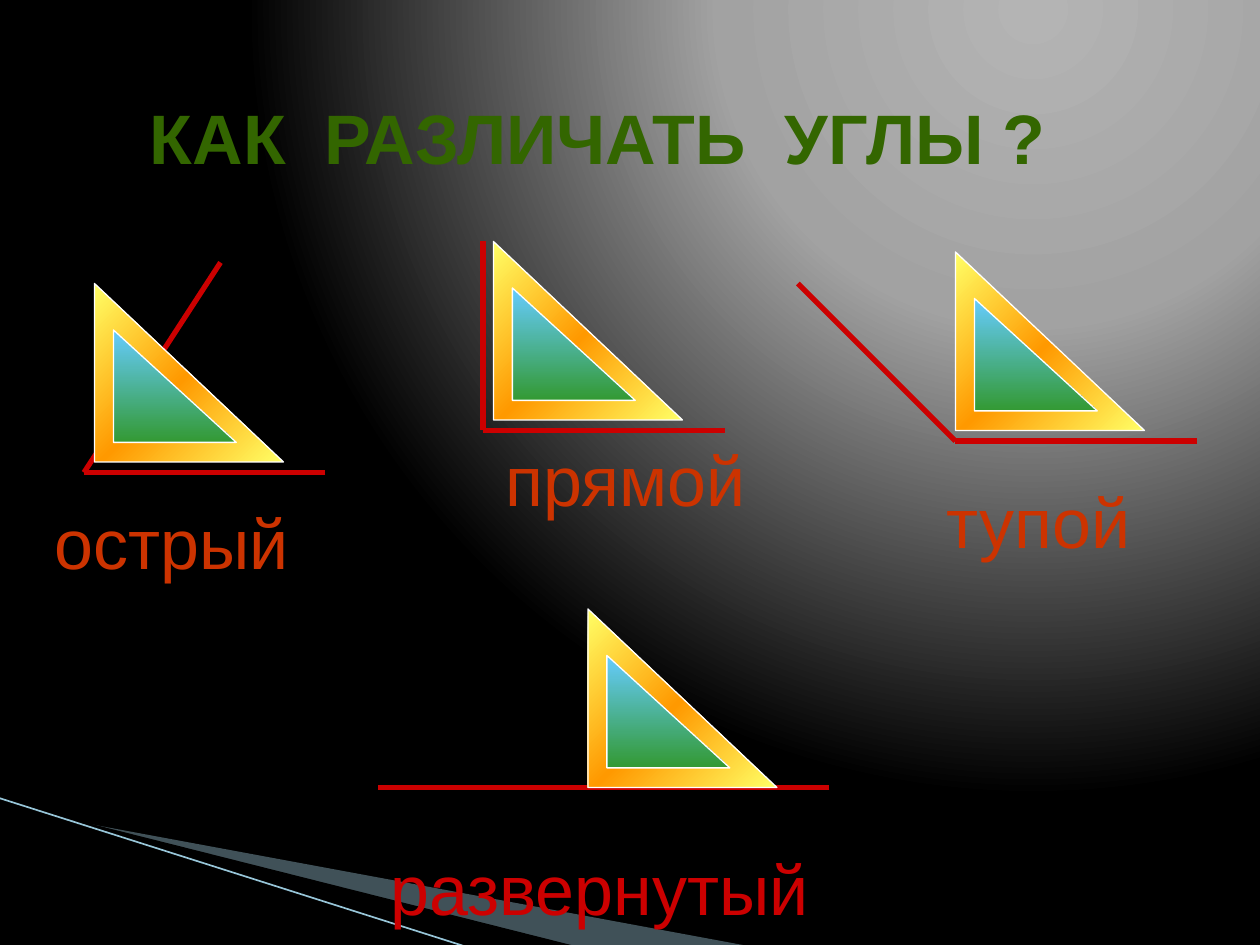
import pptx
import pptx.dml.color
import pptx.enum.shapes
import pptx.enum.text
import pptx.oxml.ns
import pptx.util
from lxml import etree

RGB = pptx.dml.color.RGBColor
BLACK, WHITE = RGB(0, 0, 0), RGB(255, 255, 255)
LIGHT_GREY, GREY = RGB(0xB4, 0xB4, 0xB4), RGB(0xA2, 0xA2, 0xA2)
WEDGE, EDGE = RGB(0xA0, 0xCB, 0xDC), RGB(0x97, 0xC5, 0xD8)
RED, RUST, GREEN = RGB(0xCC, 0, 0), RGB(0xCC, 0x33, 0), RGB(0x33, 0x66, 0)
YELLOW, ORANGE = RGB(0xFF, 0xFF, 0x66), RGB(0xFF, 0x99, 0)
SKY, GRASS = RGB(0x66, 0xCC, 0xFF), RGB(0x33, 0x99, 0x33)

# The slide is a grid of 120 columns by 90 rows, twelve to the inch
UNIT = pptx.util.Inches(1) / 12
SQUARE_SIZE = (18, 17)
LABEL_HEIGHT = 9.2


def grid(*cells):
    return [round(cell * UNIT) for cell in cells]


def child(parent, tag, **attributes):
    return etree.SubElement(parent, pptx.oxml.ns.qn(tag), attributes)


def set_gradient(fill, owner, stops, angle=None, focus=None):
    """Linear gradient at a clockwise angle, or a circular one around focus."""
    fill.gradient()
    gradient = next(owner.iter(pptx.oxml.ns.qn("a:gradFill")))
    for part in list(gradient):
        gradient.remove(part)
    stop_list = child(gradient, "a:gsLst")
    for percent, colour in stops:
        stop = child(stop_list, "a:gs", pos=str(percent * 1000))
        child(stop, "a:srgbClr", val=str(colour))
    if focus:
        circle = child(gradient, "a:path", path="circle")
        sides = {side: str(share * 1000) for side, share in zip("ltrb", focus)}
        child(circle, "a:fillToRect", **sides)
    else:
        child(gradient, "a:lin", ang=str(angle * 60000), scaled="0")


def add_line(slide, start, end, colour, width):
    line = slide.shapes.add_connector(
        pptx.enum.shapes.MSO_CONNECTOR.STRAIGHT, *grid(*start, *end))
    line.line.color.rgb = colour
    line.line.width = pptx.util.Pt(width)
    child(line._element.spPr, "a:effectLst")


def add_text(slide, left, top, width, text, colour, bold=False, wrap=True):
    box = slide.shapes.add_textbox(*grid(left, top, width, LABEL_HEIGHT))
    box.text_frame.word_wrap = wrap
    box.text_frame.auto_size = pptx.enum.text.MSO_AUTO_SIZE.SHAPE_TO_FIT_TEXT
    paragraph = box.text_frame.paragraphs[0]
    paragraph.text = text
    paragraph.font.name = "Arial"
    paragraph.font.size = pptx.util.Pt(40)
    paragraph.font.bold = bold
    paragraph.font.color.rgb = colour


def add_backdrop(slide):
    set_gradient(slide.background.fill, slide._element,
                 [(0, LIGHT_GREY), (40, GREY), (100, BLACK)],
                 focus=(65, 0, 0, 98))
    # Translucent wedge, its black lower edge and the thin line
    wedges = [
        (WEDGE, [(0.55, 6.51), (5.95, 7.51), (4.56, 7.51), (0.55, 6.5)]),
        (BLACK, [(0.53, 6.49), (4.57, 7.51), (3.72, 7.52), (0.54, 6.5)]),
    ]
    for colour, corners in wedges:
        points = [(pptx.util.Inches(x), pptx.util.Inches(y)) for x, y in corners]
        builder = slide.shapes.build_freeform(*points[0])
        builder.add_line_segments(points[1:], close=True)
        wedge = builder.convert_to_shape()
        wedge.shadow.inherit = False
        wedge.fill.solid()
        wedge.fill.fore_color.rgb = colour
        wedge.line.fill.background()
        if colour == WEDGE:
            tint = next(wedge._element.spPr.iter(pptx.oxml.ns.qn("a:srgbClr")))
            child(tint, "a:alpha", val="40000")
    add_line(slide, (-0.1, 76), (44.5, 90.2), EDGE, 0.95)


def add_set_square(slide, left, top):
    """Set square: a framed triangle with a smaller one inside."""
    width, height = SQUARE_SIZE
    group = slide.shapes.add_group_shape()
    triangles = [
        ((0, 0, 1, 1), [(0, YELLOW), (50, ORANGE), (100, YELLOW)], 45),
        ((0.1, 0.26, 0.65, 0.63), [(0, SKY), (100, GRASS)], 90),
    ]
    for (x, y, w, h), stops, angle in triangles:
        triangle = group.shapes.add_shape(
            pptx.enum.shapes.MSO_SHAPE.RIGHT_TRIANGLE,
            *grid(left + x * width, top + y * height, w * width, h * height))
        triangle.shadow.inherit = False
        set_gradient(triangle.fill, triangle._element, stops, angle)
        triangle.line.color.rgb = WHITE
        triangle.line.width = pptx.util.Pt(0.75)


def add_angle(slide, vertex, rays, square, label, width, text,
              colour=RUST, wrap=True):
    """One angle; rays, set square and label are offsets from its vertex."""
    def from_vertex(offset):
        return vertex[0] + offset[0], vertex[1] + offset[1]

    for start, end in rays:
        add_line(slide, from_vertex(start), from_vertex(end), RED, 3)
    add_set_square(slide, *from_vertex(square))
    add_text(slide, *from_vertex(label), width, text, colour, wrap=wrap)


def main():
    deck = pptx.Presentation()
    deck.slide_width, deck.slide_height = grid(120, 90)
    slide = deck.slides.add_slide(deck.slide_layouts[6])
    add_backdrop(slide)

    corner, base = (0, 0), (23, 0)
    add_angle(slide, (8, 45), [((13, -20), corner), (base, corner)],
              (1, -18), (-4, 2), 27, "острый")
    add_angle(slide, (46, 41), [(base, corner), (corner, (0, -18))],
              (1, -18), (1, 0), 26.8, "прямой", wrap=False)
    add_angle(slide, (91, 42), [(base, corner), (corner, (-15, -15))],
              (0, -18), (-2, 3), 28, "тупой")
    add_angle(slide, (56, 75), [(base, (-20, 0))],
              (0, -17), (-20, 4.9), 58, "развернутый", colour=RED)

    # Title
    add_text(slide, 13.1, 8.4, 94.7, "КАК  РАЗЛИЧАТЬ  УГЛЫ ?", GREEN, bold=True)
    deck.save("out.pptx")


if __name__ == "__main__":
    main()
